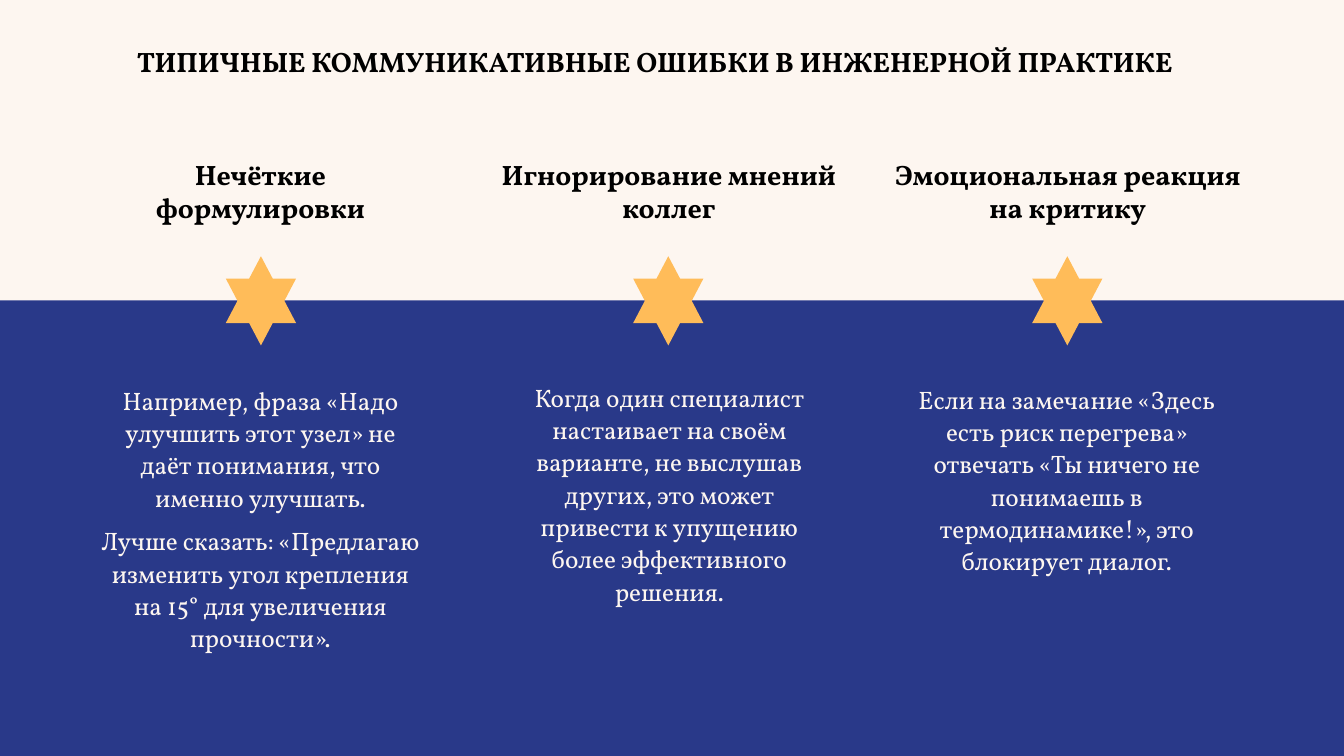
"""Build the slide on typical communication mistakes in engineering practice."""
from dataclasses import dataclass

from lxml import etree
from pptx import Presentation
from pptx import util as u
from pptx.dml import color
from pptx.enum import shapes, text
from pptx.oxml import ns

PX = 9525
FONT = "Vollkorn"
HUES = {"cream": "FDF6F0", "navy": "071A79", "gold": "FFBC59", "black": "000000"}


@dataclass(frozen=True)
class Box:
    x: int
    y: int
    w: int
    h: int

    def emu(self) -> list[u.Emu]:
        return [u.Emu(n * PX) for n in (self.x, self.y, self.w, self.h)]


@dataclass(frozen=True)
class Style:
    size: int
    hue: str
    bold: bool
    align: text.PP_ALIGN
    line: float
    after: int


@dataclass(frozen=True)
class Column:
    star: int
    head: Box
    title: list[str]
    body: Box
    paras: list[str]


MID = text.PP_ALIGN.CENTER
TITLE = Style(20, "black", True, text.PP_ALIGN.LEFT, 1.07, 8)
HEAD = Style(20, "black", True, MID, 1.0, 0)
BODY = Style(18, "cream", False, MID, 1.07, 8)

COLUMNS = [
    Column(215, Box(102, 145, 292, 74), ["Нечёткие формулировки"],
           Box(86, 360, 324, 268),
           ["Например, фраза «Надо улучшить этот узел» не даёт понимания, "
            "что именно улучшать.",
            "Лучше сказать: «Предлагаю изменить угол крепления на 15° "
            "для увеличения прочности»."]),
    Column(603, Box(455, 145, 364, 74), ["Игнорирование мнений коллег"],
           Box(491, 357, 293, 227),
           ["Когда один специалист настаивает на своём варианте, не выслушав "
            "других, это может привести к упущению более эффективного решения."]),
    Column(983, Box(802, 145, 430, 74), ["Эмоциональная реакция", "на критику"],
           Box(863, 359, 306, 195),
           ["Если на замечание «Здесь есть риск перегрева» отвечать «Ты ничего "
            "не понимаешь в термодинамике!», это блокирует диалог."]),
]


def tint(name: str) -> color.RGBColor:
    return color.RGBColor.from_string(HUES[name])


def draw(slide, kind: shapes.MSO_SHAPE, box: Box, hue: str, alpha: int = 100) -> None:
    shape = slide.shapes.add_shape(kind, *box.emu())
    shape.shadow.inherit = False
    shape.fill.solid()
    shape.fill.fore_color.rgb = tint(hue)
    shape.line.fill.background()
    if alpha < 100:
        rgb = shape.element.spPr.find(".//" + ns.qn("a:srgbClr"))
        etree.SubElement(rgb, ns.qn("a:alpha"), val=str(alpha * 1000))


def write(slide, box: Box, paras: list[str], style: Style) -> None:
    frame = slide.shapes.add_textbox(*box.emu()).text_frame
    frame.word_wrap = True
    frame.auto_size = text.MSO_AUTO_SIZE.SHAPE_TO_FIT_TEXT
    for i, words in enumerate(paras):
        para = frame.add_paragraph() if i else frame.paragraphs[0]
        para.alignment = style.align
        para.line_spacing = style.line
        para.space_after = u.Pt(style.after)
        run = para.add_run()
        run.text = words
        run.font.name = FONT
        run.font.size = u.Pt(style.size)
        run.font.bold = style.bold
        run.font.color.rgb = tint(style.hue)


def main() -> None:
    deck = Presentation()
    deck.slide_width, deck.slide_height = u.Emu(1280 * PX), u.Emu(720 * PX)
    slide = deck.slides.add_slide(deck.slide_layouts[6])
    slide.background.fill.solid()
    slide.background.fill.fore_color.rgb = tint("cream")
    draw(slide, shapes.MSO_SHAPE.RECTANGLE, Box(0, 286, 1280, 434), "navy", 86)
    write(slide, Box(121, 35, 1038, 43),
          ["ТИПИЧНЫЕ КОММУНИКАТИВНЫЕ ОШИБКИ В ИНЖЕНЕРНОЙ ПРАКТИКЕ"], TITLE)
    for col in COLUMNS:
        draw(slide, shapes.MSO_SHAPE.STAR_6_POINT, Box(col.star, 244, 67, 85), "gold")
        write(slide, col.head, col.title, HEAD)
        write(slide, col.body, col.paras, BODY)
    deck.save("out.pptx")


if __name__ == "__main__":
    main()
